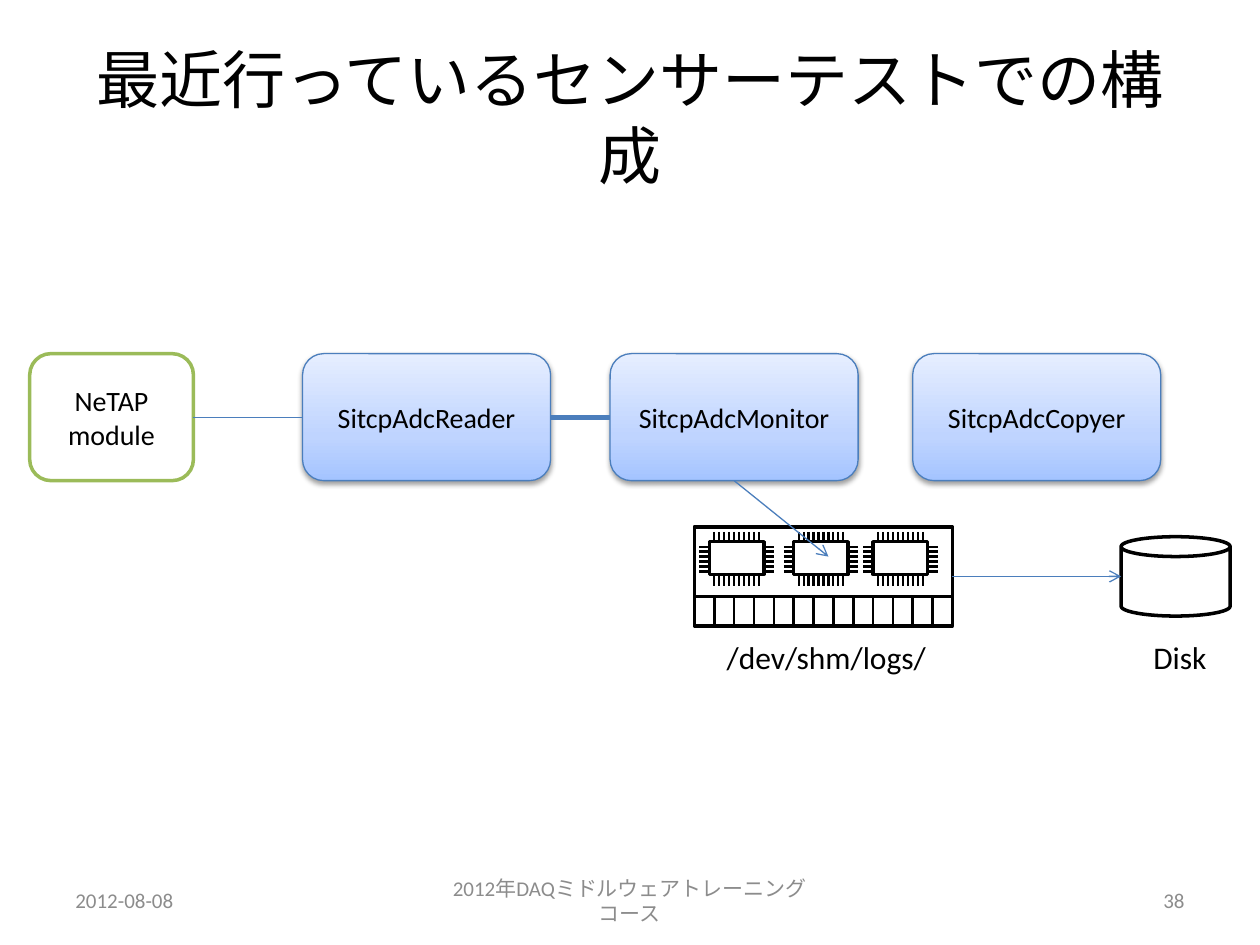
from copy import deepcopy
from dataclasses import dataclass
from typing import Any, Optional

from lxml.etree import SubElement
from pptx import Presentation
from pptx.dml.color import RGBColor
from pptx.enum.shapes import MSO_CONNECTOR, MSO_SHAPE
from pptx.enum.text import MSO_ANCHOR, MSO_AUTO_SIZE, PP_ALIGN
from pptx.oxml.ns import qn
from pptx.util import Cm, Pt

BLACK, WHITE, GREY = "000000", "FFFFFF", "8C8C8C"
BLUE, GREEN = "4B7EBC", "9BBB59"
BLEND = [(0, "A4C4FF"), (0.35, "BFD4FF"), (1, "E6EEFF")]
LEFT, MID, RIGHT = PP_ALIGN.LEFT, PP_ALIGN.CENTER, PP_ALIGN.RIGHT
ROW_TOP, ROW_HIGH = 7.13, 2.56


@dataclass
class Card:
    text: str
    x: float
    wide: float = 5.0
    edge: str = BLUE
    weight: float = 0.75
    blend: bool = True


@dataclass
class Label:
    text: str
    x: float
    y: float
    wide: float
    high: float
    size: int
    color: str = BLACK
    align: PP_ALIGN = MID
    wrap: bool = True


CARDS = [
    Card("NeTAP\nmodule", 0.6, 3.3, GREEN, 2, False),
    Card("SitcpAdcReader", 6.1),
    Card("SitcpAdcMonitor", 12.3),
    Card("SitcpAdcCopyer", 18.4),
]
LABELS = [
    Label("最近行っているセンサーテストでの構成", 1.27, 0.76, 22.86, 3.18, 36),
    Label("2012-08-08", 1.27, 17.65, 5.93, 1.01, 12, GREY, LEFT),
    Label("2012年DAQミドルウェアトレーニングコース", 8.68, 17.65, 8.04, 1.01, 12, GREY),
    Label("38", 18.2, 17.65, 5.93, 1.01, 12, GREY, RIGHT),
    Label("/dev/shm/logs/", 14.4, 12.73, 4.57, 1.03, 18, align=LEFT, wrap=False),
    Label("Disk", 23.0, 12.73, 1.6, 1.03, 18, align=LEFT, wrap=False),
]


def paint(code: str) -> RGBColor:
    return RGBColor.from_string(code)


def style(item: Any, **values: Any) -> None:
    for name, value in values.items():
        setattr(item, name, value)


def write(frame: Any, text: str, size: int, color: str, align: PP_ALIGN) -> None:
    frame.text = text
    for para in frame.paragraphs:
        para.alignment = align
        style(para.font, name="Calibri", size=Pt(size))
        para.font.color.rgb = paint(color)


def add_label(shapes: Any, label: Label) -> None:
    box = shapes.add_textbox(Cm(label.x), Cm(label.y), Cm(label.wide), Cm(label.high))
    fit = MSO_AUTO_SIZE.NONE if label.wrap else MSO_AUTO_SIZE.SHAPE_TO_FIT_TEXT
    anchor = MSO_ANCHOR.MIDDLE if label.wrap else MSO_ANCHOR.TOP
    style(box.text_frame, word_wrap=label.wrap, auto_size=fit, vertical_anchor=anchor)
    write(box.text_frame, label.text, label.size, label.color, label.align)


def add_form(shapes: Any, kind: MSO_SHAPE, x: float, y: float, wide: float,
             high: float, edge: str = BLACK, weight: float = 2) -> Any:
    """Add an unfilled, outlined preset shape."""
    form = shapes.add_shape(kind, Cm(x), Cm(y), Cm(wide), Cm(high))
    form.shadow.inherit = False
    form.fill.background()
    form.line.color.rgb = paint(edge)
    form.line.width = Pt(weight)
    return form


def add_line(shapes: Any, x1: float, y1: float, x2: float, y2: float,
             color: str = BLACK, weight: float = 1.25, arrow: bool = False) -> Any:
    line = shapes.add_connector(MSO_CONNECTOR.STRAIGHT, Cm(x1), Cm(y1), Cm(x2), Cm(y2))
    line.line.color.rgb = paint(color)
    line.line.width = Pt(weight)
    if arrow:
        SubElement(line.line._get_or_add_ln(), qn("a:tailEnd"), type="arrow")
    SubElement(line.element.spPr, qn("a:effectLst"))
    return line


def add_blend(form: Any) -> None:
    """Give a form its three-stop gradient and soft shadow."""
    form.fill.gradient()
    form.fill.gradient_angle = 90
    stops = form.element.spPr.find(".//" + qn("a:gsLst"))
    stops.append(deepcopy(stops[0]))
    for stop, (place, code) in zip(form.fill.gradient_stops, BLEND):
        stop.position = place
        stop.color.rgb = paint(code)
    shade = SubElement(form.element.spPr.find(qn("a:effectLst")), qn("a:outerShdw"),
                       blurRad=str(Pt(3.1)), dist=str(Pt(1.6)), dir="5400000", rotWithShape="0")
    tint = SubElement(shade, qn("a:srgbClr"), val=BLACK)
    SubElement(tint, qn("a:alpha"), val="38000")


def add_card(shapes: Any, card: Card) -> Any:
    form = add_form(shapes, MSO_SHAPE.ROUNDED_RECTANGLE, card.x, ROW_TOP,
                    card.wide, ROW_HIGH, card.edge, card.weight)
    if card.blend:
        add_blend(form)
    else:
        form.fill.solid()
        form.fill.fore_color.rgb = paint(WHITE)
    style(form.text_frame, word_wrap=True, vertical_anchor=MSO_ANCHOR.MIDDLE)
    write(form.text_frame, card.text, 16, BLACK, MID)
    return form


def add_chip(shapes: Any, x: float, y: float) -> None:
    wide, high, leg, step = 1.1, 0.66, 0.2, 0.1
    add_form(shapes, MSO_SHAPE.RECTANGLE, x, y, wide, high)
    for top in (y - leg, y + 0.7):
        for i in range(1, 11):
            add_line(shapes, x + i * step, top, x + i * step, top + leg)
    for side in (x - leg, x + wide):
        for i in range(1, 7):
            add_line(shapes, side, y + i * step, side + leg, y + i * step)


def add_board(shapes: Any, x: float, y: float) -> Any:
    """Draw the memory module and return its outer frame."""
    wide, high, split = 5.2, 2.0, 1.4
    parts = shapes.add_group_shape().shapes
    frame = add_form(parts, MSO_SHAPE.RECTANGLE, x, y, wide, high)
    add_line(parts, x, y + split, x + wide, y + split, weight=2)
    for i in range(1, 13):
        pin = x + i * 0.4
        add_line(parts, pin, y + split, pin, y + high, weight=1.5)
    for shift in (0.3, 2.0, 3.6):
        add_chip(parts, x + shift, y + 0.3)
    return frame


def link(shapes: Any, start: Optional[Any], end: Optional[Any], weight: float) -> None:
    """Join the right side of one card to the left side of the next."""
    line = add_line(shapes, 0, 0, 1, 1, BLUE, weight)
    line.begin_connect(start, 3)
    line.end_connect(end, 1)


def main() -> None:
    deck = Presentation()
    style(deck, slide_width=Cm(25.4), slide_height=Cm(19.05))
    shapes = deck.slides.add_slide(deck.slide_layouts[6]).shapes
    for label in LABELS:
        add_label(shapes, label)
    source, reader, watch, _ = [add_card(shapes, card) for card in CARDS]
    link(shapes, source, reader, 0.75)
    link(shapes, reader, watch, 3)
    add_form(shapes, MSO_SHAPE.CAN, 22.6, 10.82, 2.2, 1.6)
    board = add_board(shapes, 14.0, 10.62)
    store = add_line(shapes, 14.8, 9.69, 16.7, 11.22, BLUE, 0.75, True)
    store.begin_connect(watch, 2)
    save = add_line(shapes, 19.2, 11.62, 22.6, 11.62, BLUE, 0.75, True)
    save.begin_connect(board, 3)
    deck.save("out.pptx")


if __name__ == "__main__":
    main()
